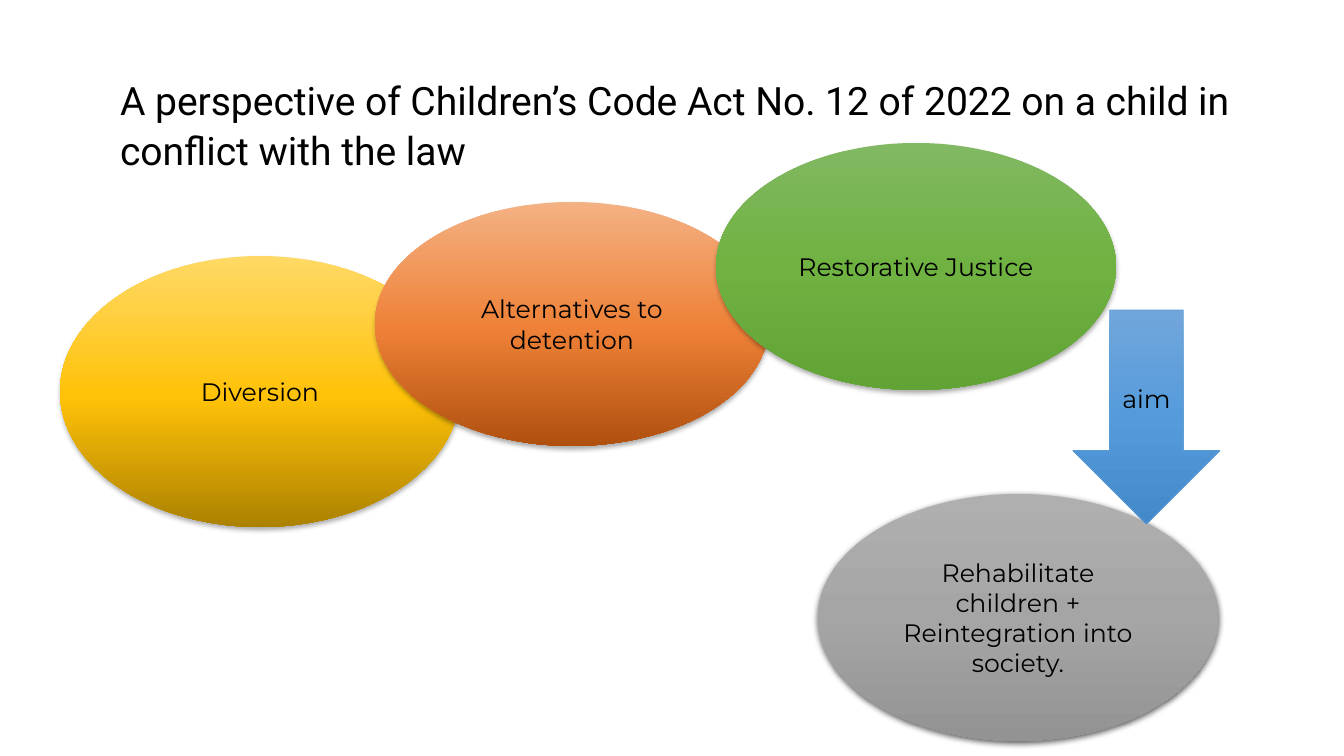
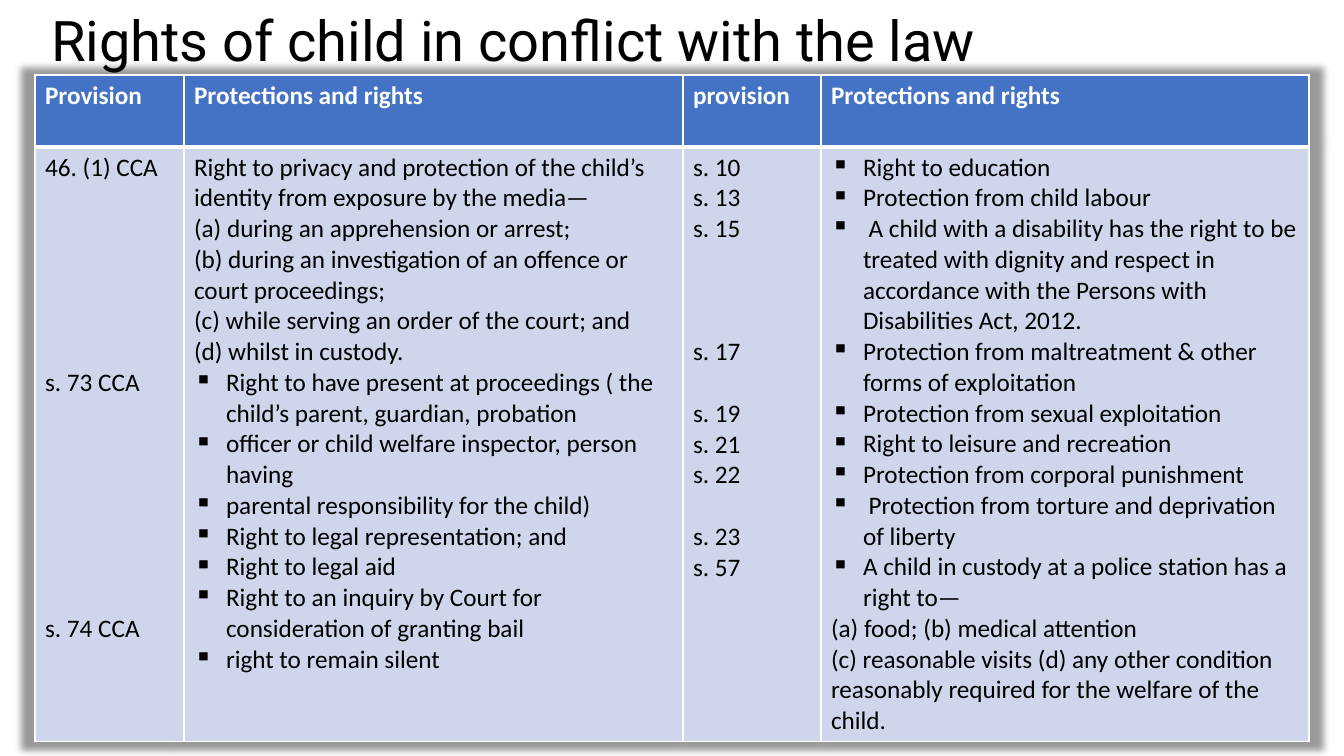
"""Build two slides on the rights of a child in conflict with the law."""
import copy

import pptx
import pptx.dml.color
import pptx.enum.shapes
import pptx.enum.text
import pptx.oxml.ns
import pptx.oxml.xmlchemy
import pptx.util
from lxml import etree

RGB = pptx.dml.color.RGBColor
Pt = pptx.util.Pt
SHAPE = pptx.enum.shapes.MSO_SHAPE
ALIGN = pptx.enum.text.PP_ALIGN
ANCHOR = pptx.enum.text.MSO_ANCHOR
qn = pptx.oxml.ns.qn

BLACK = RGB(0x00, 0x00, 0x00)
WHITE = RGB(0xFF, 0xFF, 0xFF)
HEADER_BLUE = RGB(0x44, 0x72, 0xC4)
BODY_BLUE = RGB(0xCF, 0xD5, 0xEA)
ARROW_LINE = RGB(0x5B, 0x9B, 0xD5)
YELLOWS = RGB(0xFF, 0xD9, 0x66), RGB(0xFF, 0xC2, 0x08), RGB(0xAB, 0x81, 0x00)
ORANGES = RGB(0xF4, 0xB1, 0x83), RGB(0xEE, 0x81, 0x37), RGB(0xB0, 0x50, 0x0F)
GREENS = RGB(0x81, 0xB8, 0x61), RGB(0x6F, 0xB2, 0x42), RGB(0x62, 0xA3, 0x36)
GREYS = RGB(0xAF, 0xAF, 0xAF), RGB(0xA5, 0xA5, 0xA5), RGB(0x93, 0x93, 0x93)
BLUES = RGB(0x71, 0xA6, 0xDB), RGB(0x55, 0x9B, 0xDB), RGB(0x44, 0x8A, 0xCA)

SLIDE_W, SLIDE_H = 1344, 756
PX = 12192000 / SLIDE_W
LINE_PT = 22
INDENT = 32

SOFT = {"alpha": 32, "blur": 3.5, "dist": 2.2}
STRONG = {"alpha": 63, "blur": 4.5, "dist": 1.5}
HALO = {"alpha": 40, "blur": 5, "dist": 0, "scale": 102}

CONCEPT_TITLE = ("A perspective of Children’s Code Act No. 12 of 2022 "
                 "on a child in conflict with the law")
CONCEPTS = [
    (SHAPE.OVAL, (60, 256, 400, 271), YELLOWS, 0.52, SOFT, ["Diversion"]),
    (SHAPE.OVAL, (375, 202, 394, 244), ORANGES, 0.52, SOFT, ["Alternatives to detention"]),
    (SHAPE.OVAL, (716, 143, 400, 247), GREENS, 0.5, SOFT, ["Restorative Justice"]),
    (SHAPE.OVAL, (818, 494, 400, 247), GREYS, 0.5, STRONG,
     ["Rehabilitate children +", "Reintegration into society."]),
    (SHAPE.DOWN_ARROW, (1073, 310, 147, 214), BLUES, 0.5, None, ["aim"]),
]

RIGHTS_TITLE = "Rights of child in conflict with the law"
COLUMNS = [149, 499, 138, 488]
ROWS = [72, 594]
HEADERS = ["Provision", "Protections and rights", "provision", "Protections and rights"]
BULLET = {"bullet": "▪"}
CELLS = [
    [("46. (1) CCA", {}), ("s. 73 CCA", {"gap": 6}), ("s. 74 CCA", {"gap": 7})],
    [
        ("Right to privacy and protection of the child’s identity from exposure by the media—", {}),
        ("(a) during an apprehension or arrest;", {}),
        ("(b) during an investigation of an offence or court proceedings;", {}),
        ("(c) while serving an order of the court; and", {}),
        ("(d) whilst in custody.", {}),
        ("Right to have present at proceedings ( the child’s parent, guardian, probation", BULLET),
        ("officer or child welfare inspector, person having", BULLET),
        ("parental responsibility for the child)", BULLET),
        ("Right to legal representation; and", BULLET),
        ("Right to legal aid", BULLET),
        ("Right to an inquiry by Court for consideration of granting bail", BULLET),
        ("right to remain silent", BULLET),
    ],
    [
        ("s. 10", {}), ("s. 13", {}), ("s. 15", {}), ("s. 17", {"gap": 3}),
        ("s. 19", {"gap": 1}), ("s. 21", {}), ("s. 22", {}),
        ("s. 23", {"gap": 1}), ("s. 57", {}),
    ],
    [
        ("Right to education", BULLET),
        ("Protection from child labour", BULLET),
        (" A child with a disability has the right to be treated with dignity and respect "
         "in accordance with the Persons with Disabilities Act, 2012.", BULLET),
        ("Protection from maltreatment & other forms of exploitation", BULLET),
        ("Protection from sexual exploitation", BULLET),
        ("Right to leisure and recreation", BULLET),
        ("Protection from corporal punishment", BULLET),
        (" Protection from torture and deprivation of liberty", BULLET),
        ("A child in custody at a police station has a right to—", BULLET),
        ("(a) food; (b) medical attention", {}),
        ("(c) reasonable visits (d) any other condition reasonably required "
         "for the welfare of the child.", {}),
    ],
]


def px(*values):
    return [round(v * PX) for v in values]


def write(tf, text, font="Calibri", size=18, color=BLACK, bold=False,
          align=ALIGN.LEFT, spacing=None, gap=0, bullet=None):
    p = tf.add_paragraph() if tf.text else tf.paragraphs[0]
    p.alignment = align
    if spacing:
        p.line_spacing = spacing
    if gap:
        p.space_before = Pt(gap * LINE_PT)
    if bullet:
        pPr = p._p.get_or_add_pPr()
        indent, = px(INDENT)
        pPr.set("marL", str(indent))
        pPr.set("indent", str(-indent))
        etree.SubElement(pPr, qn("a:buChar"), char=bullet)
    r = p.add_run()
    r.text = text
    r.font.name, r.font.size, r.font.bold = font, Pt(size), bold
    r.font.color.rgb = color


def add_shadow(effects, alpha, blur, dist, scale=100):
    shadow = etree.SubElement(
        effects, qn("a:outerShdw"), blurRad=str(Pt(blur)), dist=str(Pt(dist)),
        dir="5400000", sx=str(scale * 1000), sy=str(scale * 1000),
        algn="ctr", rotWithShape="0")
    color = etree.SubElement(shadow, qn("a:srgbClr"), val=str(BLACK))
    etree.SubElement(color, qn("a:alpha"), val=str(alpha * 1000))


def add_titled_slide(prs, text, box, size, spacing):
    s = prs.slides.add_slide(prs.slide_layouts[5])
    title = s.shapes.title
    title.left, title.top, title.width, title.height = px(*box)
    tf = title.text_frame
    tf.word_wrap = True
    tf.auto_size = pptx.enum.text.MSO_AUTO_SIZE.NONE
    tf.vertical_anchor = ANCHOR.MIDDLE
    write(tf, text, font="Roboto", size=size, spacing=spacing)
    return s


def add_concept(s, kind, box, colors, middle, shadow, lines):
    sp = s.shapes.add_shape(kind, *px(*box))
    sp.fill.gradient()
    sp.fill.gradient_angle = 270
    stops = sp._element.spPr.find(".//" + qn("a:gsLst"))
    stops.append(copy.deepcopy(stops[0]))
    for stop, color, position in zip(sp.fill.gradient_stops, colors, (0, middle, 1)):
        stop.color.rgb, stop.position = color, position
    sp.shadow.inherit = False
    if shadow:
        sp.line.fill.background()
        add_shadow(sp._element.spPr.find(qn("a:effectLst")), **shadow)
    else:
        sp.line.color.rgb, sp.line.width = ARROW_LINE, Pt(0.5)
    tf = sp.text_frame
    tf.word_wrap = True
    tf.vertical_anchor = ANCHOR.MIDDLE
    for line in lines:
        write(tf, line, font="Montserrat", align=ALIGN.CENTER)


def format_cell(cell, fill, top, bottom):
    tcPr = cell._tc.get_or_add_tcPr()
    for side, width in (("L", 1), ("R", 1), ("T", top), ("B", bottom)):
        ln = etree.SubElement(tcPr, qn("a:ln" + side), w=str(Pt(width)))
        solid = etree.SubElement(ln, qn("a:solidFill"))
        etree.SubElement(solid, qn("a:srgbClr"), val=str(WHITE))
    cell.fill.solid()
    cell.fill.fore_color.rgb = fill


def add_rights_table(s):
    frame = s.shapes.add_table(2, len(COLUMNS), *px(35, 75, sum(COLUMNS), sum(ROWS)))
    table = frame.table
    table.horz_banding = False
    effects = etree.Element(qn("a:effectLst"))
    table._tbl.tblPr.insert(0, effects)
    add_shadow(effects, **HALO)
    for row, height in zip(table.rows, px(*ROWS)):
        row.height = height
    for i, width in enumerate(px(*COLUMNS)):
        table.columns[i].width = width
        header, body = table.cell(0, i), table.cell(1, i)
        format_cell(header, HEADER_BLUE, 1, 3)
        format_cell(body, BODY_BLUE, 3, 1)
        write(header.text_frame, HEADERS[i], color=WHITE, bold=True)
        for text, fmt in CELLS[i]:
            write(body.text_frame, text, **fmt)


def main():
    prs = pptx.Presentation()
    prs.slide_width, prs.slide_height = px(SLIDE_W, SLIDE_H)
    s = add_titled_slide(prs, CONCEPT_TITLE, (110, 55, 1159, 136), 27.9, 1.07)
    for concept in CONCEPTS:
        add_concept(s, *concept)
    s = add_titled_slide(prs, RIGHTS_TITLE, (41, 0, 1273, 87), 40, 0.9)
    add_rights_table(s)
    prs.save("out.pptx")


if __name__ == "__main__":
    main()
